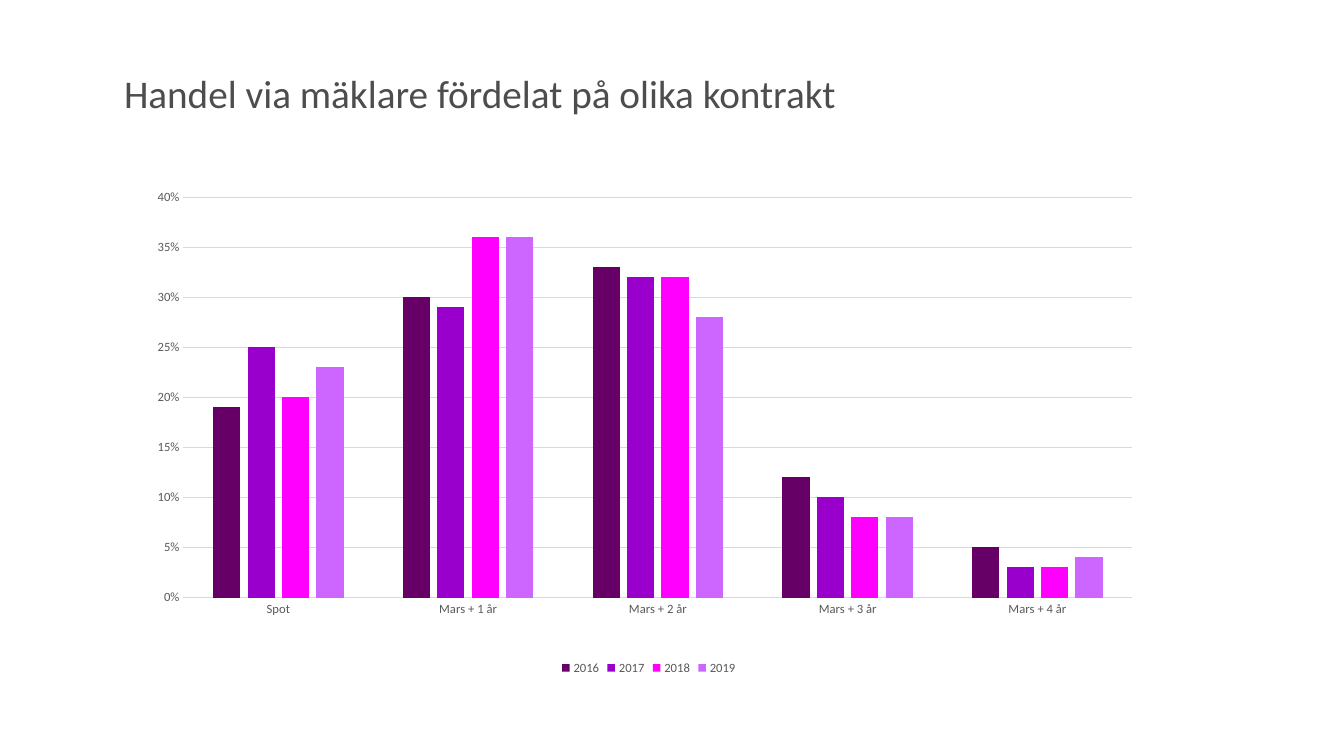
from dataclasses import dataclass

from lxml.etree import SubElement
from pptx import Presentation
from pptx.chart.data import CategoryChartData
from pptx.dml.color import RGBColor
from pptx.enum.chart import XL_CHART_TYPE, XL_LEGEND_POSITION, XL_TICK_MARK
from pptx.enum.text import MSO_ANCHOR, PP_ALIGN
from pptx.oxml.ns import qn
from pptx.util import Inches, Pt


@dataclass(frozen=True)
class Theme:
    font: str = "Calibri"
    title_size: int = 28
    label_size: int = 9
    title_color: str = "4C4D4F"
    label_color: str = "595959"
    line_color: str = "D9D9D9"
    series_colors: tuple = ("660066", "9900CC", "FF00FF", "CC66FF")


CONTRACTS = ("Spot", "Mars + 1 år", "Mars + 2 år", "Mars + 3 år", "Mars + 4 år")
SHARES = {
    "2016": (0.19, 0.30, 0.33, 0.12, 0.05),
    "2017": (0.25, 0.29, 0.32, 0.10, 0.03),
    "2018": (0.20, 0.36, 0.32, 0.08, 0.03),
    "2019": (0.23, 0.36, 0.28, 0.08, 0.04),
}


def format_font(font, *, name, size, color):
    font.name = name
    font.size = Pt(size)
    font.bold = False
    font.color.rgb = RGBColor.from_string(color)


def write_text(frame, text, *, align=PP_ALIGN.LEFT, anchor=MSO_ANCHOR.TOP, **font_format):
    frame.text = text
    frame.word_wrap = True
    frame.vertical_anchor = anchor
    para = frame.paragraphs[0]
    para.alignment = align
    format_font(para.runs[0].font, **font_format)


def place_plot(chart, **fractions):
    """Fix the inner plot area as fractions (x, y, w, h) of the chart frame."""
    plot_area = chart._chartSpace.chart.plotArea
    for old_layout in plot_area.findall(qn("c:layout")):
        plot_area.remove(old_layout)
    layout = SubElement(plot_area, qn("c:layout"))
    plot_area.insert(0, layout)
    manual = SubElement(layout, qn("c:manualLayout"))
    settings = {"layoutTarget": "inner", "xMode": "edge", "yMode": "edge", **fractions}
    for tag, value in settings.items():
        SubElement(manual, qn(f"c:{tag}")).set("val", str(value))


class SlideBuilder:
    def __init__(self, deck, theme):
        self.theme = theme
        self.slide = deck.slides.add_slide(deck.slide_layouts[5])

    def place(self, shape, left, top, width, height):
        shape.left, shape.top = Inches(left), Inches(top)
        shape.width, shape.height = Inches(width), Inches(height)

    def label_font(self, font):
        format_font(font, name=self.theme.font, size=self.theme.label_size,
                    color=self.theme.label_color)

    def thin_line(self, line):
        line.color.rgb = RGBColor.from_string(self.theme.line_color)
        line.width = Pt(0.75)

    def title(self, text, *bounds):
        box = self.slide.shapes.title
        self.place(box, *bounds)
        write_text(box.text_frame, text, name=self.theme.font,
                   size=self.theme.title_size, color=self.theme.title_color)

    def column_chart(self, categories, series_values, *bounds):
        data = CategoryChartData(number_format="0%")
        data.categories = categories
        for name, values in series_values.items():
            data.add_series(name, values)
        chart = self.slide.shapes.add_chart(
            XL_CHART_TYPE.COLUMN_CLUSTERED, *map(Inches, bounds), data).chart
        chart.has_title = False
        self.label_font(chart.font)
        self.style_columns(chart.plots[0])
        self.style_axes(chart.category_axis, chart.value_axis)
        chart.has_legend = True
        chart.legend.position = XL_LEGEND_POSITION.BOTTOM
        chart.legend.include_in_layout = False
        self.label_font(chart.legend.font)
        place_plot(chart, x=0.065, y=0.08, w=0.887, h=0.764)

    def style_columns(self, plot):
        plot.gap_width = 219
        plot.overlap = -27
        plot.vary_by_categories = False
        for series, color in zip(plot.series, self.theme.series_colors):
            series.format.fill.solid()
            series.format.fill.fore_color.rgb = RGBColor.from_string(color)
            series.invert_if_negative = False

    def style_axes(self, category_axis, value_axis):
        for axis in (category_axis, value_axis):
            axis.major_tick_mark = XL_TICK_MARK.NONE
            axis.minor_tick_mark = XL_TICK_MARK.NONE
            self.label_font(axis.tick_labels.font)
        self.thin_line(category_axis.format.line)
        value_axis.format.line.fill.background()
        value_axis.has_major_gridlines = True
        self.thin_line(value_axis.major_gridlines.format.line)
        value_axis.minimum_scale = 0
        value_axis.maximum_scale = 0.4
        value_axis.major_unit = 0.05
        value_axis.tick_labels.number_format = "0%"
        value_axis.tick_labels.number_format_is_linked = False


def main():
    deck = Presentation()
    deck.slide_width, deck.slide_height = Inches(13.33), Inches(7.5)
    page = SlideBuilder(deck, Theme())
    page.title("Handel via mäklare fördelat på olika kontrakt", 1.13, 0.64, 11.27, 0.9)
    page.column_chart(CONTRACTS, SHARES, 1.13, 1.54, 10.61, 5.2)
    deck.save("out.pptx")


if __name__ == "__main__":
    main()
